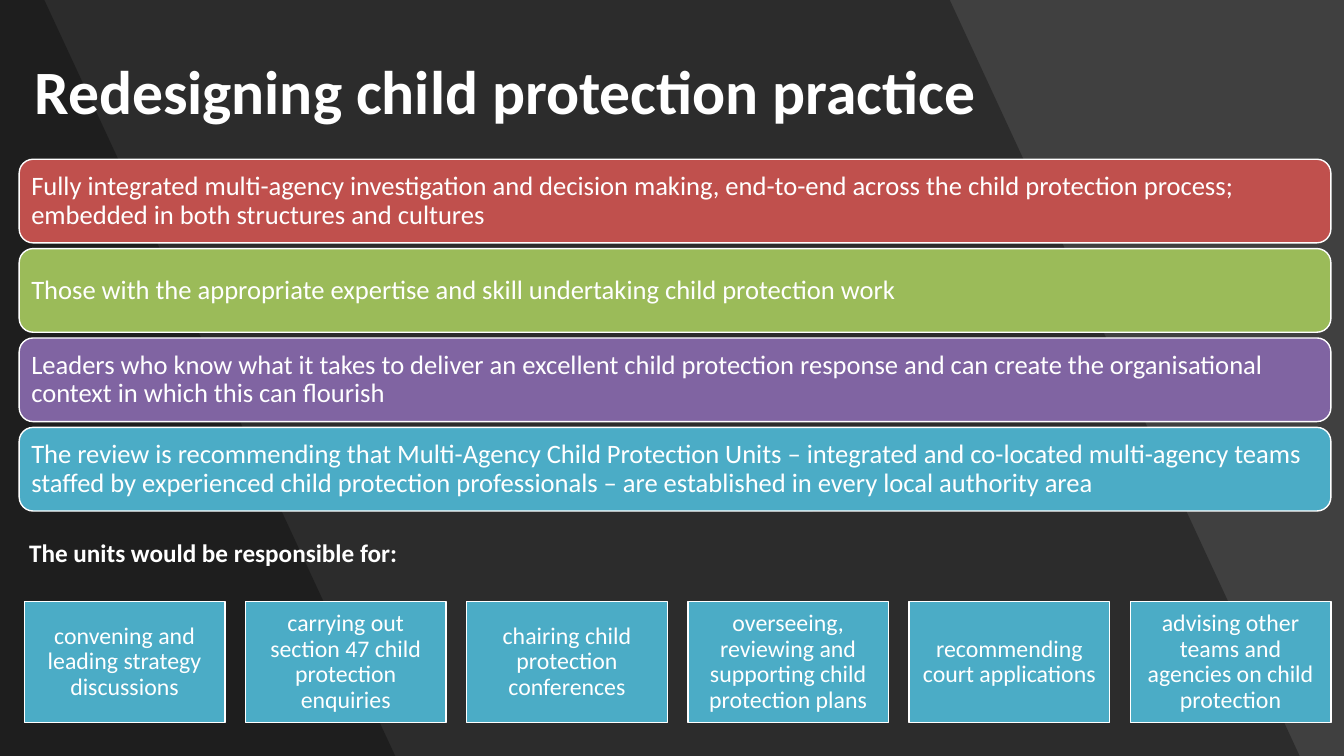
from lxml import etree
from pptx import Presentation
from pptx.dml.color import RGBColor
from pptx.enum.shapes import MSO_SHAPE as Shape
from pptx.enum.text import MSO_ANCHOR as Anchor, MSO_AUTO_SIZE as AutoSize, PP_ALIGN as Align
from pptx.oxml.ns import qn
from pptx.util import Inches, Pt

COLORS = {
    "background": "404040", "shade": "000000", "white": "FFFFFF",
    "red": "C0504D", "green": "9BBB59", "purple": "8064A2", "teal": "4BACC6",
}

PRINCIPLES = [
    ("red", "Fully integrated multi-agency investigation and decision making, end-to-end across "
            "the child protection process; embedded in both structures and cultures"),
    ("green", "Those with the appropriate expertise and skill undertaking child protection work"),
    ("purple", "Leaders who know what it takes to deliver an excellent child protection response "
               "and can create the organisational context in which this can flourish"),
    ("teal", "The review is recommending that Multi-Agency Child Protection Units – integrated and "
             "co-located multi-agency teams staffed by experienced child protection professionals "
             "– are established in every local authority area"),
]
DUTIES = [
    "convening and leading strategy discussions",
    "carrying out section 47 child protection enquiries",
    "chairing child protection conferences",
    "overseeing, reviewing and supporting child protection plans",
    "recommending court applications",
    "advising other teams and agencies on child protection",
]


def color(name):
    return RGBColor.from_string(COLORS[name])


class SlideBuilder:
    """Holds the shared style and the slide being filled."""

    font_name = "Calibri"

    def __init__(self, page):
        self.page = page
        fill = page.background.fill
        fill.solid()
        fill.fore_color.rgb = color("background")

    def set_text(self, shape, text, size, bold=False, align=Align.LEFT,
                 anchor=Anchor.MIDDLE, spacing=0.9, inset=None, auto_size=AutoSize.NONE):
        frame = shape.text_frame
        frame_format = {"word_wrap": True, "auto_size": auto_size, "vertical_anchor": anchor}
        if inset is not None:
            for side in ("left", "top", "right", "bottom"):
                frame_format[f"margin_{side}"] = Inches(inset)
        for key, value in frame_format.items():
            setattr(frame, key, value)
        para = frame.paragraphs[0]
        para.alignment = align
        para.line_spacing = spacing
        span = para.add_run()
        span.text = text
        for key, value in {"name": self.font_name, "size": Pt(size), "bold": bold}.items():
            setattr(span.font, key, value)
        span.font.color.rgb = color("white")

    def title(self, text, left, top, width, height, size):
        box = self.page.shapes.title
        for key, value in {"left": left, "top": top, "width": width, "height": height}.items():
            setattr(box, key, Inches(value))
        self.set_text(box, text, size, bold=True)
        # Bring the title in front of the shading
        box.element.getparent().append(box.element)

    def shade(self, top_right, bottom_right, height, opacity):
        """A translucent panel from the left edge to a slanted right edge."""
        builder = self.page.shapes.build_freeform(0, 0)
        corners = [(top_right, 0), (bottom_right, height), (0, height)]
        builder.add_line_segments([(Inches(x), Inches(y)) for x, y in corners])
        panel = builder.convert_to_shape()
        panel.shadow.inherit = False
        panel.line.fill.background()
        panel.fill.solid()
        panel.fill.fore_color.rgb = color("shade")
        tint = panel.element.spPr.find(f"{qn('a:solidFill')}/{qn('a:srgbClr')}")
        etree.SubElement(tint, qn("a:alpha")).set("val", str(opacity * 1000))

    def block(self, kind, place, fill, text, size, **text_format):
        box = self.page.shapes.add_shape(kind, *map(Inches, place))
        box.shadow.inherit = False
        box.fill.solid()
        box.fill.fore_color.rgb = color(fill)
        box.line.color.rgb = color("white")
        box.line.width = Pt(1)
        self.set_text(box, text, size, **text_format)

    def caption(self, place, text, size):
        box = self.page.shapes.add_textbox(*map(Inches, place))
        self.set_text(box, text, size, bold=True, anchor=Anchor.TOP, spacing=1.0,
                      auto_size=AutoSize.SHAPE_TO_FIT_TEXT)


def main():
    deck = Presentation()
    deck.slide_width, deck.slide_height = Inches(13.33), Inches(7.5)
    builder = SlideBuilder(deck.slides.add_slide(deck.slide_layouts[5]))

    # Slanted background shading
    for top_right, bottom_right in [(9.42, 12.89), (0.44, 3.92)]:
        builder.shade(top_right, bottom_right, height=7.5, opacity=30)

    builder.title("Redesigning child protection practice", 0.24, 0.21, 11.51, 1.45, size=44)

    # Stacked principles
    first_top, last_top = 1.58, 4.24
    row_step = (last_top - first_top) / (len(PRINCIPLES) - 1)
    for row, (fill, text) in enumerate(PRINCIPLES):
        builder.block(Shape.ROUNDED_RECTANGLE, (0.19, first_top + row * row_step, 13.01, 0.83),
                      fill, text, 19, inset=0.08)

    # Row of unit duties
    builder.caption((0.19, 5.28, 6.66, 0.4), "The units would be responsible for:", 18)
    first_left, last_left = 0.24, 11.21
    column_step = (last_left - first_left) / (len(DUTIES) - 1)
    for column, text in enumerate(DUTIES):
        builder.block(Shape.RECTANGLE, (first_left + column * column_step, 5.97, 1.99, 1.2),
                      "teal", text, 17, align=Align.CENTER, inset=0.07)

    deck.save("out.pptx")


if __name__ == "__main__":
    main()
